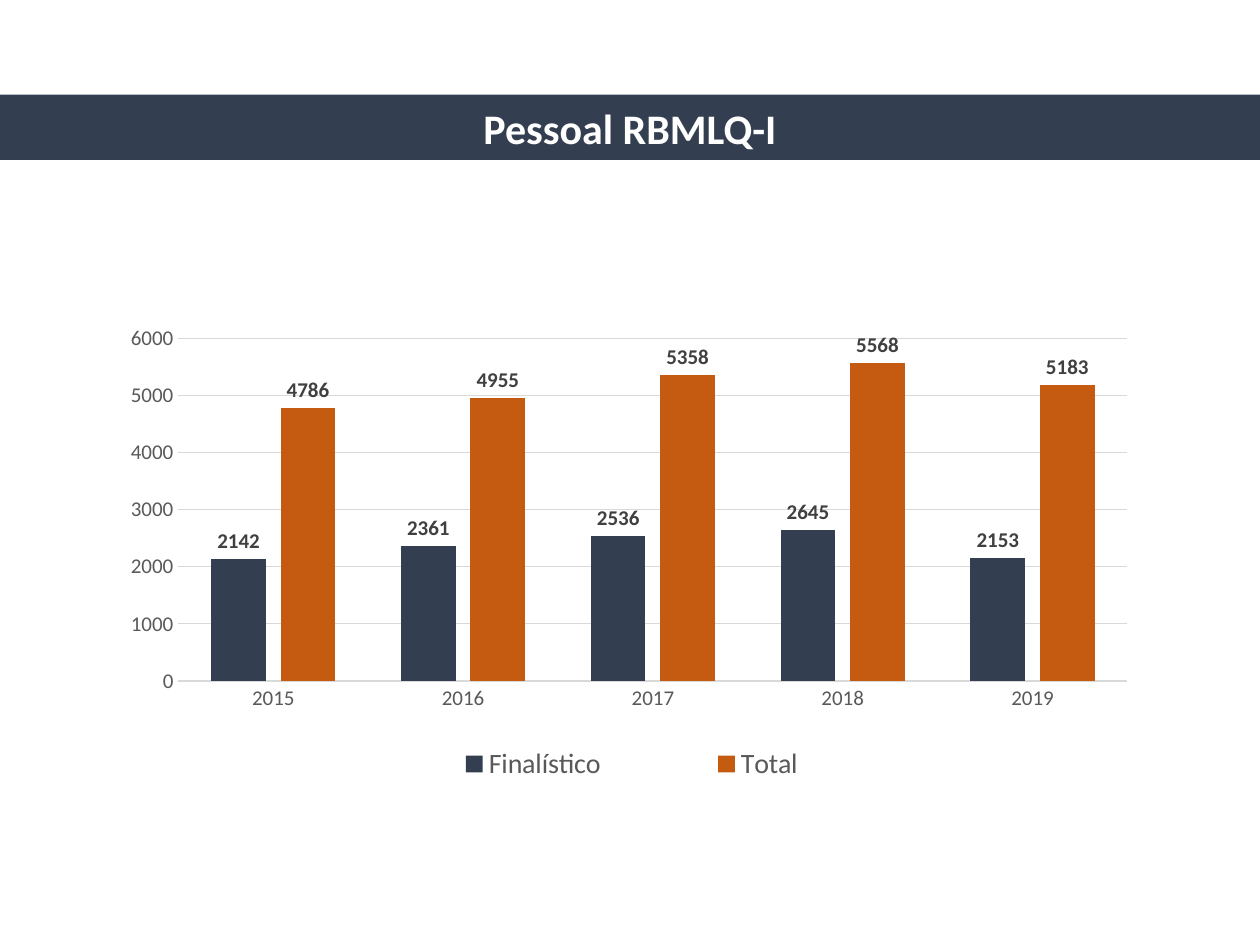
from lxml import etree
from pptx import Presentation
from pptx import util as u
from pptx.chart.data import CategoryChartData
from pptx.dml.color import RGBColor
from pptx.enum import chart as c, text
from pptx.oxml.ns import qn

TITLE = "Pessoal RBMLQ-I"
YEARS = ["2015", "2016", "2017", "2018", "2019"]
STAFF = {
    "Finalístico": [2142, 2361, 2536, 2645, 2153],
    "Total": [4786, 4955, 5358, 5568, 5183],
}
THEME = {
    "font": "Calibri",
    "banner": "333F50", "title": "FFFFFF", "axis": "595959",
    "label": "404040", "grid": "D9D9D9", "base": "000000",
    "series": ["333F50", "C55A11"],
    "title_size": 24, "axis_size": 12, "legend_size": 16, "base_size": 10,
}
BANNER_BOX = (0, 0.75, 10, 0.52)
CHART_BOX = (0.83, 2.09, 8.37, 4.25)
PLOT_LAYOUT = (0.07, 0.14, 0.9, 0.64)
LEGEND_LAYOUT = (0.24, 0.89, 0.52, 0.09)


def color(name):
    return RGBColor.from_string(THEME.get(name, name))


def style_font(font, size, color_name, bold=False):
    font.name = THEME["font"]
    font.size = u.Pt(THEME[size])
    font.bold = bold
    font.color.rgb = color(color_name)


def style_line(line):
    line.color.rgb = color("grid")
    line.width = u.Pt(0.75)


def set_layout(parent, box, after=None, inner=False):
    for old in parent.findall(qn("c:layout")):
        parent.remove(old)
    layout = etree.Element(qn("c:layout"))
    manual = etree.SubElement(layout, qn("c:manualLayout"))
    settings = [("layoutTarget", "inner")] if inner else []
    settings += [("xMode", "edge"), ("yMode", "edge")]
    settings += zip("xywh", box)
    for tag, value in settings:
        etree.SubElement(manual, qn(f"c:{tag}")).set("val", str(value))
    position = 0 if after is None else parent.index(parent.find(qn(after))) + 1
    parent.insert(position, layout)


def add_banner(slide):
    banner = slide.shapes.title
    banner.left, banner.top, banner.width, banner.height = map(u.Inches, BANNER_BOX)
    banner.fill.solid()
    banner.fill.fore_color.rgb = color("banner")
    frame = banner.text_frame
    frame.vertical_anchor = text.MSO_ANCHOR.MIDDLE
    frame.auto_size = text.MSO_AUTO_SIZE.NONE
    paragraph = frame.paragraphs[0]
    paragraph.alignment = text.PP_ALIGN.CENTER
    run = paragraph.add_run()
    run.text = TITLE
    style_font(run.font, "title_size", "title", bold=True)


def add_staff_chart(slide):
    data = CategoryChartData(number_format="General")
    data.categories = YEARS
    for name, values in STAFF.items():
        data.add_series(name, values)
    chart = slide.shapes.add_chart(
        c.XL_CHART_TYPE.COLUMN_CLUSTERED, *map(u.Inches, CHART_BOX), data).chart
    chart.has_title = False
    style_font(chart.font, "base_size", "base")

    for axis in (chart.category_axis, chart.value_axis):
        axis.major_tick_mark = axis.minor_tick_mark = c.XL_TICK_MARK.NONE
        style_font(axis.tick_labels.font, "axis_size", "axis")
    style_line(chart.category_axis.format.line)
    value_axis = chart.value_axis
    value_axis.format.line.fill.background()
    value_axis.minimum_scale, value_axis.maximum_scale = 0, 6000
    value_axis.major_unit = 1000
    style_line(value_axis.major_gridlines.format.line)

    plot = chart.plots[0]
    plot.gap_width, plot.overlap = 120, -27
    plot.vary_by_categories = False
    for series, fill in zip(plot.series, THEME["series"]):
        series.format.fill.solid()
        series.format.fill.fore_color.rgb = color(fill)
        labels = series.data_labels
        labels.show_value = True
        labels.position = c.XL_LABEL_POSITION.OUTSIDE_END
        style_font(labels.font, "axis_size", "label", bold=True)

    chart.has_legend = True
    legend = chart.legend
    legend.position = c.XL_LEGEND_POSITION.BOTTOM
    legend.include_in_layout = False
    style_font(legend.font, "legend_size", "axis")

    chart_root = chart.element
    set_layout(chart_root.find(f".//{qn('c:plotArea')}"), PLOT_LAYOUT, inner=True)
    set_layout(chart_root.find(f".//{qn('c:legend')}"), LEGEND_LAYOUT, after="c:legendPos")


def main():
    presentation = Presentation()
    presentation.slide_width, presentation.slide_height = u.Inches(10), u.Inches(7.5)
    slide = presentation.slides.add_slide(presentation.slide_layouts[5])
    add_banner(slide)
    add_staff_chart(slide)
    presentation.save("out.pptx")


if __name__ == "__main__":
    main()
